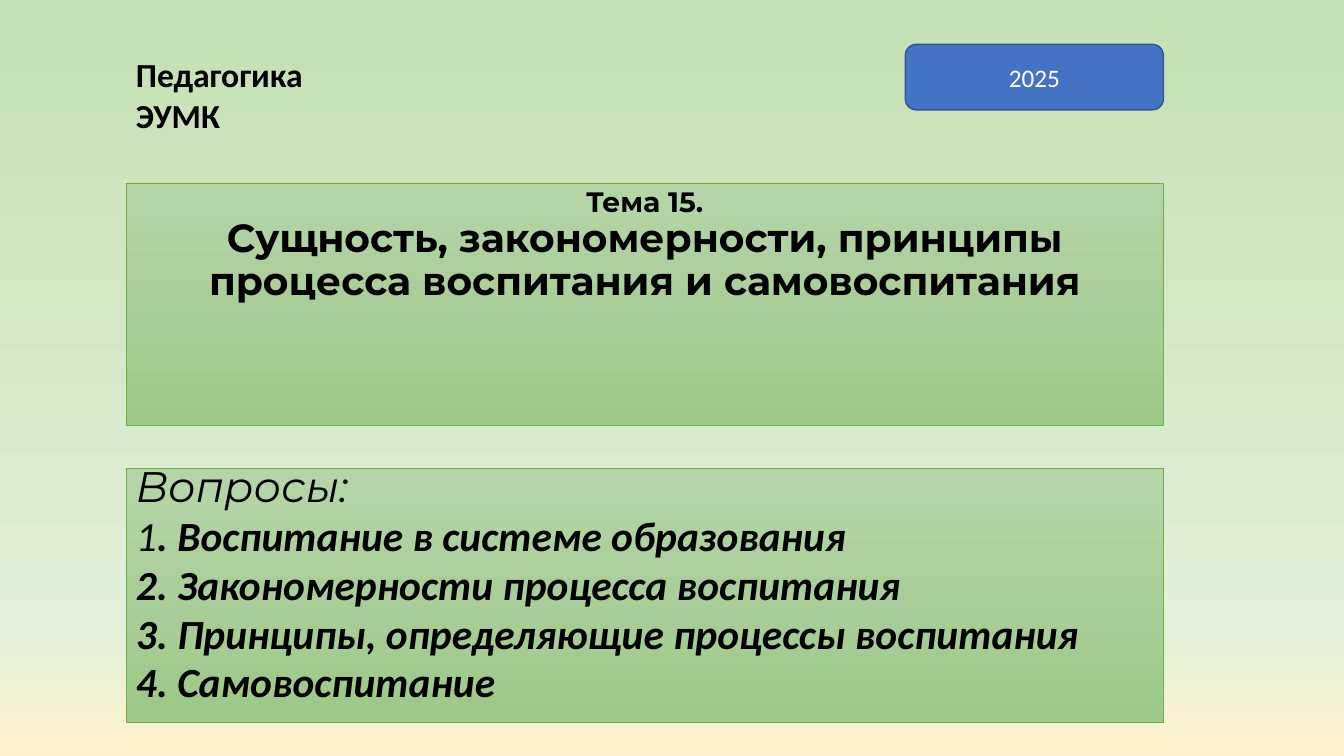
from lxml.etree import SubElement
from pptx import Presentation
from pptx.dml.color import RGBColor
from pptx.enum.shapes import MSO_SHAPE as Preset
from pptx.enum.text import MSO_ANCHOR as Anchor, MSO_AUTO_SIZE as AutoSize, PP_ALIGN as Align
from pptx.oxml.ns import qn
from pptx.util import Inches, Pt

COLORS = {
    "ink": "000000", "white": "FFFFFF",
    "meadow": "C5E0B4", "mist": "E2F0D9", "cream": "FFF2CC",
    "panel_top": "B5D5A7", "panel_mid": "AACE9A", "panel_low": "9CC987",
    "panel_edge": "70AD47", "badge": "4472C4", "badge_edge": "325491",
}
BACKDROP = [(0, "meadow"), (83, "mist"), (100, "cream")]
PANEL = [(0, "panel_top"), (50, "panel_mid"), (100, "panel_low")]
COLUMNS, ROWS = 64, 36
LEFT, PANEL_WIDTH = 6, 49.4
BADGE_WIDTH = 12.29


class TopicSlide:
    def __init__(self, deck):
        self.column = deck.slide_width / COLUMNS
        self.row = deck.slide_height / ROWS
        self.slide = deck.slides.add_slide(deck.slide_layouts[5])
        self.gradient(self.slide.background.fill, BACKDROP)

    def box(self, left, top, width, height):
        return (round(left * self.column), round(top * self.row),
                round(width * self.column), round(height * self.row))

    def color(self, name):
        return RGBColor.from_string(COLORS[name])

    def gradient(self, fill, stops):
        fill.gradient()
        fill.gradient_angle = 270
        stop_list = fill.gradient_stops[0]._gs.getparent()
        for old_stop in list(stop_list):
            stop_list.remove(old_stop)
        for position, name in stops:
            stop = SubElement(stop_list, qn("a:gs"), pos=str(position * 1000))
            SubElement(stop, qn("a:srgbClr"), val=COLORS[name])

    def outline(self, shape, name, width):
        shape.line.color.rgb = self.color(name)
        shape.line.width = Pt(width)

    def add_lines(self, frame, lines, anchor=Anchor.TOP, wrap=True, spacing=1.0, before=0):
        frame.word_wrap = wrap
        frame.auto_size = AutoSize.NONE
        frame.vertical_anchor = anchor
        for index, (align, runs) in enumerate(lines):
            paragraph = frame.paragraphs[0] if index == 0 else frame.add_paragraph()
            paragraph.alignment = align
            paragraph.line_spacing = spacing
            paragraph.space_before = Pt(before)
            for text, size, font, bold, italic, ink in runs:
                run = paragraph.add_run()
                run.text = text
                run.font.size = Pt(size)
                run.font.name = font
                run.font.bold = bold
                run.font.italic = italic
                run.font.color.rgb = self.color(ink)

    def title(self, place, lines):
        heading = self.slide.shapes.title
        heading.left, heading.top, heading.width, heading.height = self.box(*place)
        self.gradient(heading.fill, PANEL)
        self.outline(heading, "panel_edge", 0.5)
        self.add_lines(heading.text_frame, lines, spacing=0.9)

    def panel(self, place, lines):
        questions = self.slide.shapes.add_shape(Preset.RECTANGLE, *self.box(*place))
        questions.shadow.inherit = False
        self.gradient(questions.fill, PANEL)
        self.outline(questions, "panel_edge", 0.5)
        self.add_lines(questions.text_frame, lines, spacing=0.7, before=10)

    def label(self, place, lines):
        course = self.slide.shapes.add_textbox(*self.box(*place))
        self.add_lines(course.text_frame, lines, wrap=False)

    def badge(self, place, lines):
        year = self.slide.shapes.add_shape(Preset.ROUNDED_RECTANGLE, *self.box(*place))
        year.shadow.inherit = False
        year.fill.solid()
        year.fill.fore_color.rgb = self.color("badge")
        self.outline(year, "badge_edge", 1)
        self.add_lines(year.text_frame, lines, anchor=Anchor.MIDDLE)


def topic(text, size):
    return Align.CENTER, [(text, size, "Montserrat", True, False, "ink")]


def question(text, number=""):
    runs = [(number, 29.6, "Calibri", False, True, "ink")] if number else []
    return Align.LEFT, runs + [(text, 29.6, "Calibri", True, True, "ink")]


def course_line(text):
    return Align.LEFT, [(text, 24, "Calibri", True, False, "ink")]


def main():
    deck = Presentation()
    deck.slide_width, deck.slide_height = Inches(13.33), Inches(7.5)
    page = TopicSlide(deck)
    page.title((LEFT, 8.74, PANEL_WIDTH, 11.52), [
        topic("Тема 15.", 20),
        topic("Сущность, закономерности, принципы процесса воспитания и самовоспитания", 28),
    ])
    page.panel((LEFT, 22.32, PANEL_WIDTH, 12.1), [
        (Align.JUSTIFY, [("Вопросы:", 30.5, "Montserrat", False, True, "ink")]),
        question(". Воспитание в системе образования", number="1"),
        question("2. Закономерности процесса воспитания"),
        question("3. Принципы, определяющие процессы воспитания"),
        question("4. Самовоспитание"),
    ])
    page.label((LEFT, 2.35, 9, 4.37), [course_line("Педагогика"), course_line("ЭУМК")])
    page.badge((LEFT + PANEL_WIDTH - BADGE_WIDTH, 2.11, BADGE_WIDTH, 3.12), [
        (Align.CENTER, [("2025", 18, "Calibri", False, False, "white")]),
    ])
    deck.save("out.pptx")


if __name__ == "__main__":
    main()
